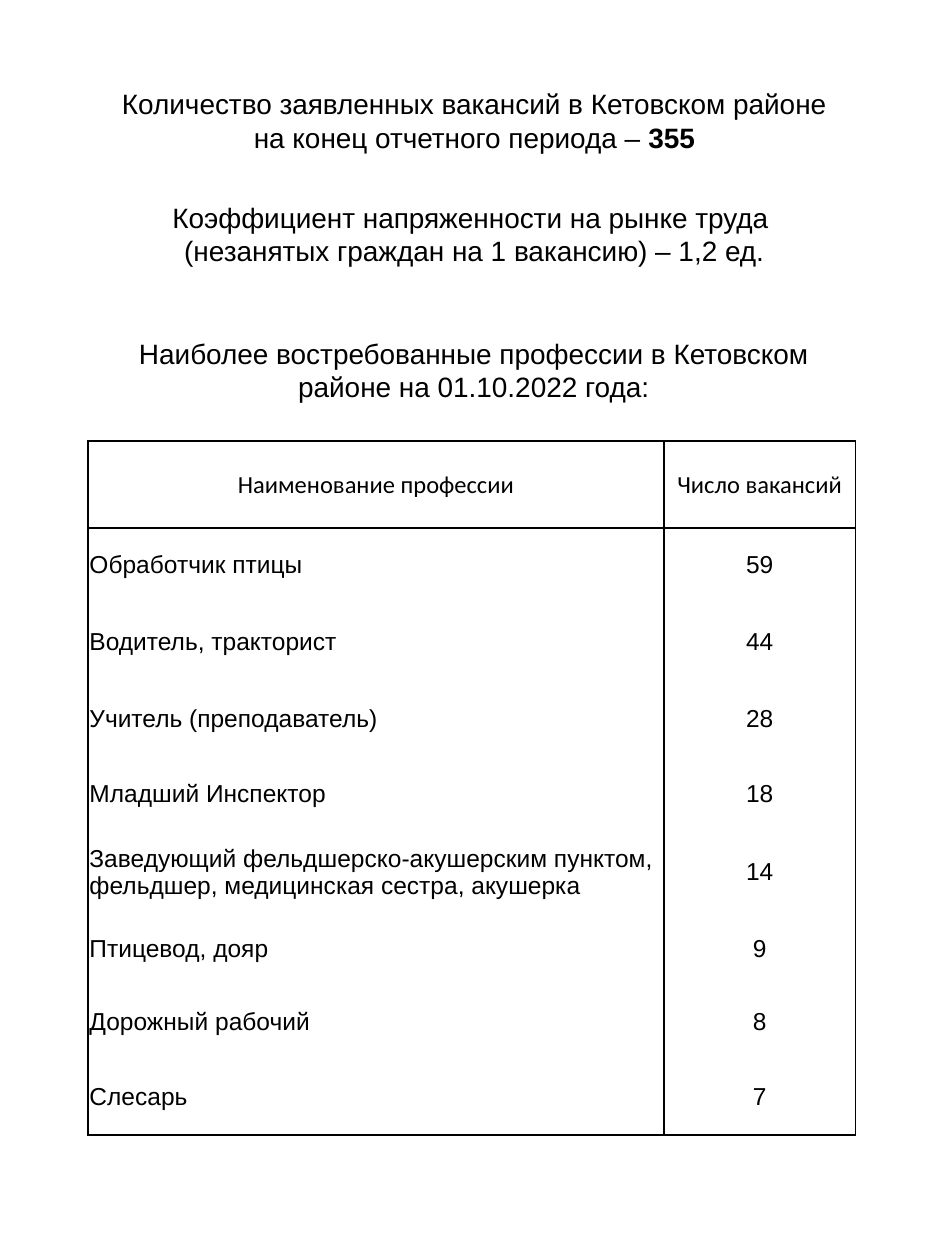
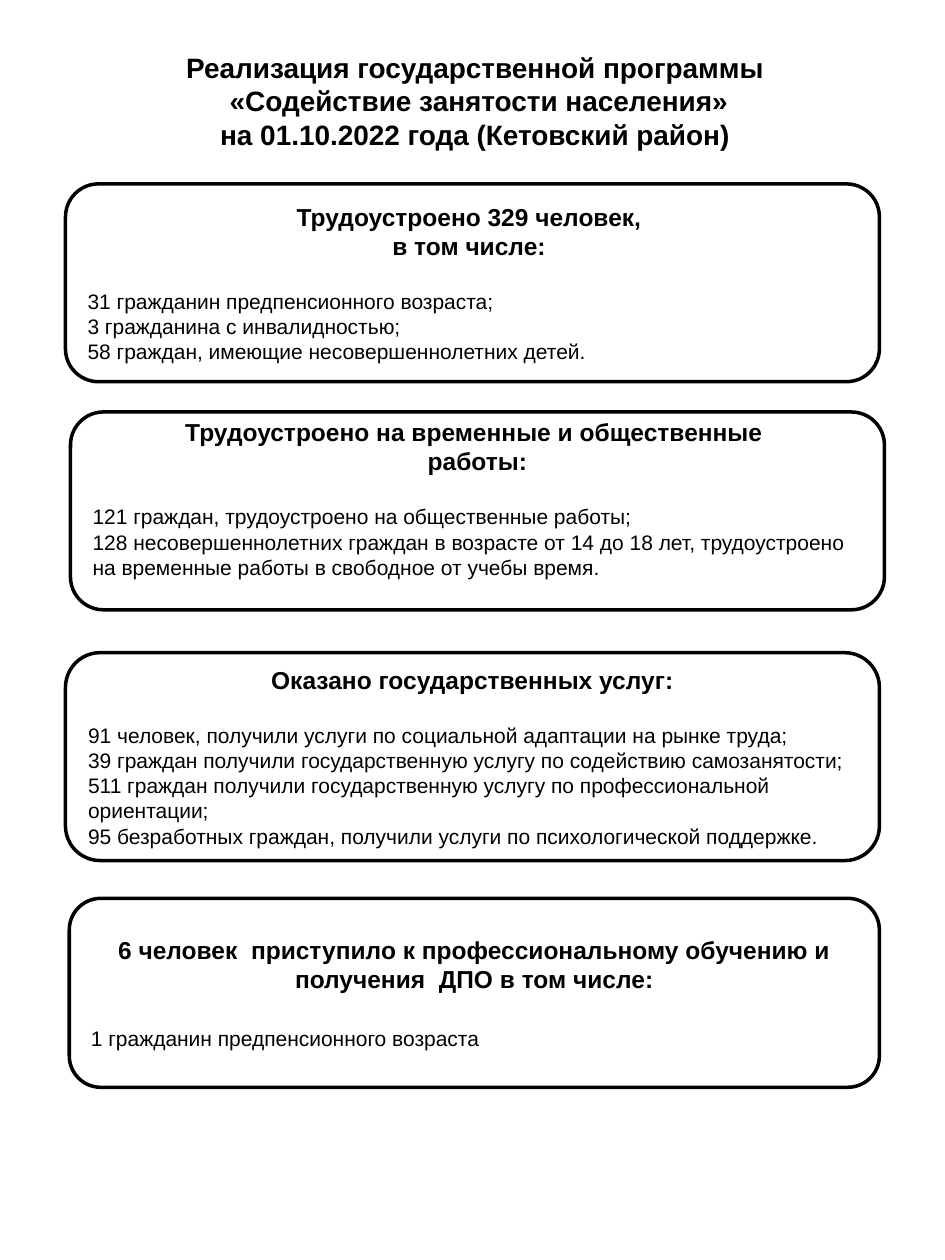
import pptx
import pptx.util
import pptx.dml.color
import pptx.enum.shapes
import pptx.enum.text
import pptx.oxml
import pptx.oxml.ns

Inches = pptx.util.Inches
Pt = pptx.util.Pt
CENTER = pptx.enum.text.PP_ALIGN.CENTER
LEFT = pptx.enum.text.PP_ALIGN.LEFT
TOP = pptx.enum.text.MSO_ANCHOR.TOP
MIDDLE = pptx.enum.text.MSO_ANCHOR.MIDDLE
GROW = pptx.enum.text.MSO_AUTO_SIZE.SHAPE_TO_FIT_TEXT
BLACK = "000000"
WHITE = "FFFFFF"
HEADING_FRAME = {"word_wrap": True, "auto_size": GROW, "vertical_anchor": TOP}
CELL_FORMAT = {
    "vertical_anchor": MIDDLE,
    "margin_left": Inches(0.01),
    "margin_right": Inches(0.01),
    "margin_top": Inches(0.01),
    "margin_bottom": 0,
}


def color(value):
    return pptx.dml.color.RGBColor.from_string(value)


def write(paragraph, text, size, bold=False, align=CENTER, font="Arial"):
    paragraph.alignment = align
    run = paragraph.add_run()
    run.text = text
    for name, value in {"name": font, "size": Pt(size), "bold": bold}.items():
        setattr(run.font, name, value)
    run.font.color.rgb = color(BLACK)


deck = pptx.Presentation()
deck.slide_width = Inches(7.5)
deck.slide_height = Inches(10)
title_only = deck.slide_layouts[5]
vacancies = deck.slides.add_slide(title_only)
program = deck.slides.add_slide(title_only)

headings = [
    (vacancies, True, (0.74, 0.64, 6.05, 0.64), False,
     ["Количество заявленных вакансий в Кетовском районе на конец отчетного периода – "]),
    (vacancies, False, (0.74, 1.54, 6.05, 0.64), False,
     ["Коэффициент напряженности на рынке труда ",
      "(незанятых граждан на 1 вакансию) – 1,2 ед."]),
    (vacancies, False, (0.77, 2.62, 5.98, 0.64), False,
     ["Наиболее востребованные профессии в Кетовском районе на 01.10.2022 года:"]),
    (program, True, (0.56, 0.35, 6.42, 0.91), True,
     ["Реализация государственной программы",
      " «Содействие занятости населения»",
      "на 01.10.2022 года (Кетовский район)"]),
]
for slide, is_title, place, bold, lines in headings:
    area = [Inches(length) for length in place]
    heading = slide.shapes.title if is_title else slide.shapes.add_textbox(*area)
    heading.left, heading.top, heading.width, heading.height = area
    frame = heading.text_frame
    for name, value in HEADING_FRAME.items():
        setattr(frame, name, value)
    for index, line in enumerate(lines):
        write(frame.add_paragraph() if index else frame.paragraphs[0], line, 16, bold)
write(vacancies.shapes.title.text_frame.paragraphs[0], "355", 16, True)

professions = [
    ("Наименование профессии", "Число вакансий", 0.69),
    ("Обработчик птицы", "59", 0.58),
    ("Водитель, тракторист", "44", 0.64),
    ("Учитель (преподаватель)", "28", 0.58),
    ("Младший Инспектор", "18", 0.61),
    ("Заведующий фельдшерско-акушерским пунктом, фельдшер, медицинская сестра, акушерка",
     "14", 0.64),
    ("Птицевод, дояр", "9", 0.58),
    ("Дорожный рабочий", "8", 0.58),
    ("Слесарь", "7", 0.61),
]
demand = vacancies.shapes.add_table(
    len(professions), 2, Inches(0.7), Inches(3.5), Inches(6.09), Inches(5.51)).table
demand.first_row = False
demand.horz_banding = False
demand.columns[0].width = Inches(4.57)
demand.columns[1].width = Inches(1.52)
last = len(professions) - 1
for row, (profession, count, height) in enumerate(professions):
    demand.rows[row].height = Inches(height)
    edges = {"lnL": True, "lnR": True, "lnT": row <= 1, "lnB": row in (0, last)}
    for column, text in enumerate((profession, count)):
        cell = demand.cell(row, column)
        for name, value in CELL_FORMAT.items():
            setattr(cell, name, value)
        write(cell.text_frame.paragraphs[0], text, 14,
              align=LEFT if row and column == 0 else CENTER,
              font="Arial" if row else "Calibri")
        properties = cell._tc.get_or_add_tcPr()
        for edge, drawn in edges.items():
            paint = (f'<a:solidFill><a:srgbClr val="{BLACK}"/></a:solidFill>'
                     if drawn else "<a:noFill/>")
            properties.append(pptx.oxml.parse_xml(
                f'<a:{edge} {pptx.oxml.ns.nsdecls("a")} w="{Pt(1)}">{paint}</a:{edge}>'))
        cell.fill.background()

results = [
    ((0.52, 1.46, 6.46, 1.57), 0.05, 16,
     ["Трудоустроено 329 человек, ", "в том числе: "],
     ["31 гражданин предпенсионного возраста;",
      "3 гражданина с инвалидностью;",
      "58 граждан, имеющие несовершеннолетних детей."]),
    ((0.56, 3.27, 6.46, 1.57), 0.25, 16,
     ["Трудоустроено на временные и общественные ", "работы:"],
     ["121 граждан, трудоустроено на общественные работы;",
      "128 несовершеннолетних граждан в возрасте от 14 до 18 лет, трудоустроено "
      "на временные работы в свободное от учебы время."]),
    ((0.52, 5.18, 6.46, 1.65), 0.05, 16,
     ["Оказано государственных услуг:"],
     ["91 человек, получили услуги по социальной адаптации на рынке труда;",
      "39 граждан получили государственную услугу по содействию самозанятости;",
      "511 граждан получили государственную услугу по профессиональной ориентации;",
      "95 безработных граждан, получили услуги по психологической поддержке."]),
    ((0.55, 7.13, 6.43, 1.5), 0.05, 18,
     ["6 человек  приступило к профессиональному обучению и получения  ДПО в том числе:"],
     ["1 гражданин предпенсионного возраста"]),
]
for place, bottom_margin, gap, summary, details in results:
    card = program.shapes.add_shape(
        pptx.enum.shapes.MSO_SHAPE.ROUNDED_RECTANGLE, *[Inches(length) for length in place])
    card.shadow.inherit = False
    card.fill.solid()
    card.fill.fore_color.rgb = color(WHITE)
    card.line.color.rgb = color(BLACK)
    card.line.width = Pt(2)
    frame = card.text_frame
    card_frame = {"word_wrap": True, "vertical_anchor": MIDDLE,
                  "margin_bottom": Inches(bottom_margin)}
    for name, value in card_frame.items():
        setattr(frame, name, value)
    for index, line in enumerate(summary + details):
        paragraph = frame.add_paragraph() if index else frame.paragraphs[0]
        if index < len(summary):
            write(paragraph, line, 14, True)
        else:
            write(paragraph, line, 12, align=LEFT)
        if index == len(summary):
            paragraph.space_before = Pt(gap)

deck.save("out.pptx")
